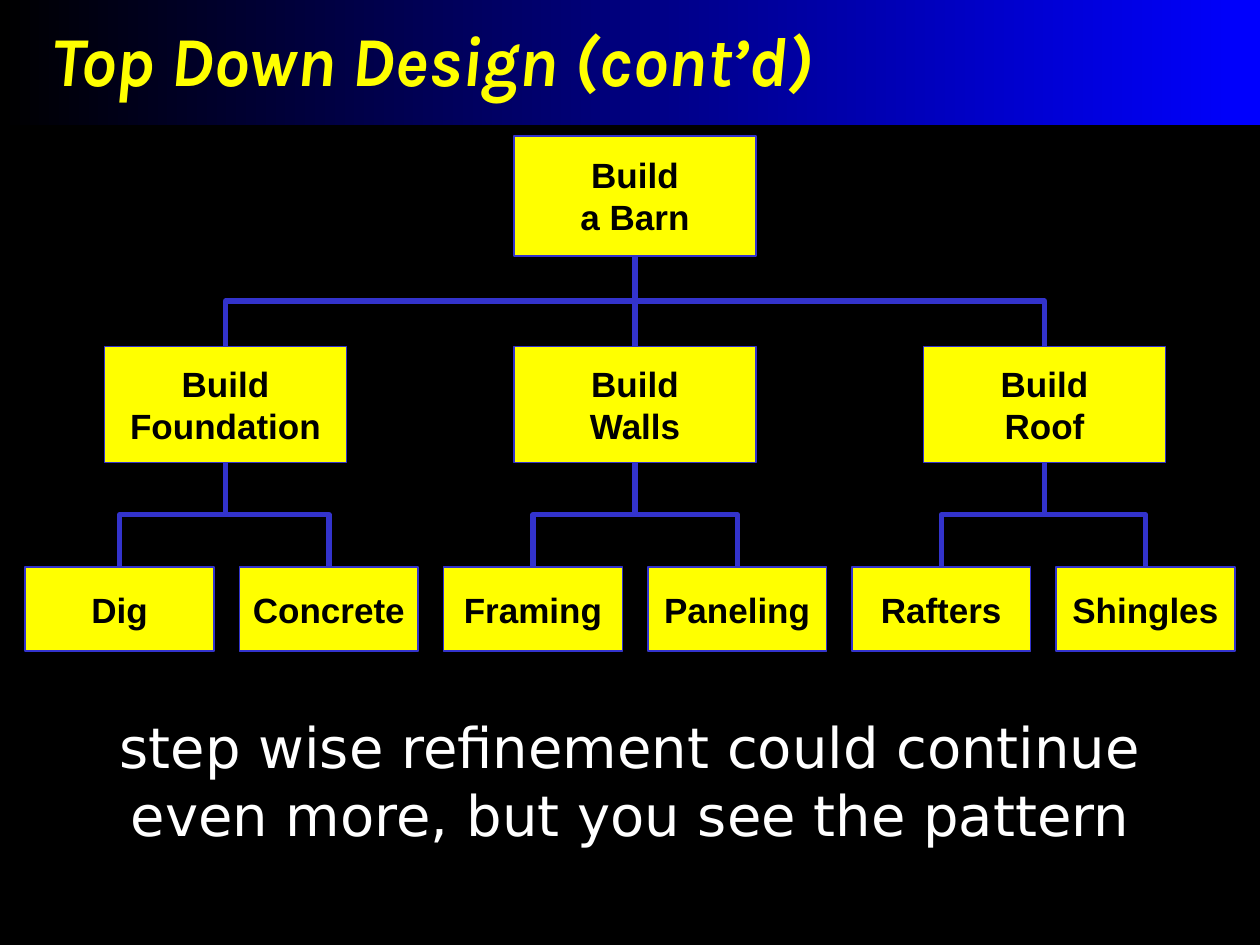
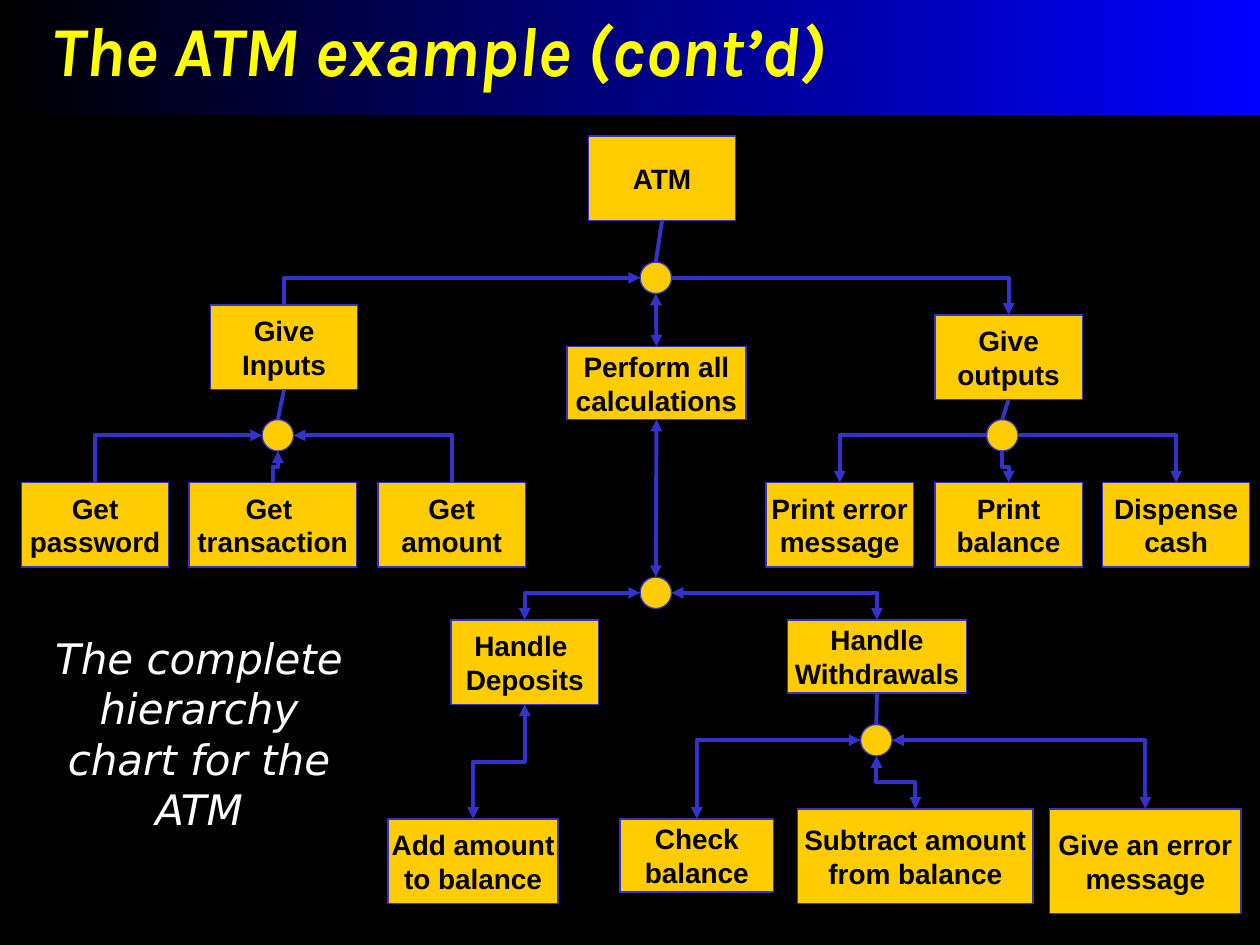
import dataclasses

import lxml.etree
import pptx
import pptx.dml.color
import pptx.enum.shapes
import pptx.enum.text
import pptx.oxml.ns
import pptx.util

Inches = pptx.util.Inches
Align = pptx.enum.text.PP_ALIGN
Anchor = pptx.enum.text.MSO_ANCHOR
Preset = pptx.enum.shapes.MSO_SHAPE
qn = pptx.oxml.ns.qn
rgb = pptx.dml.color.RGBColor.from_string


@dataclasses.dataclass(frozen=True)
class Theme:
    background: str = "000000"
    band_end: str = "0000FF"
    title: str = "FFFF00"
    task: str = "FFFF00"
    module: str = "FFCC00"
    line: str = "3333CC"
    label: str = "000000"
    caption: str = "FFFFFF"
    title_font: str = "Karla"
    label_font: str = "Arial"
    caption_font: str = "DejaVu Sans"
    title_size: int = 40
    task_size: int = 20
    module_size: int = 16


theme = Theme()
SIDES = {"top": (0.5, 0), "left": (0, 0.5), "bottom": (0.5, 1), "right": (1, 0.5)}


def write_text(shape, text, *, font, size, color, bold=False, italic=False, align=Align.CENTER,
               anchor=Anchor.TOP, wrap=True, grow=False, insets=(0.1, 0.05, 0.1, 0.05)):
    frame = shape.text_frame
    frame.word_wrap = wrap
    frame.vertical_anchor = anchor
    resize = pptx.enum.text.MSO_AUTO_SIZE
    frame.auto_size = resize.SHAPE_TO_FIT_TEXT if grow else resize.NONE
    frame.margin_left, frame.margin_top, frame.margin_right, frame.margin_bottom = map(Inches, insets)
    frame.text = text
    for paragraph in frame.paragraphs:
        paragraph.alignment = align
        paragraph.space_before = pptx.util.Pt(0)
        for run in paragraph.runs:
            run.font.name = font
            run.font.size = pptx.util.Pt(size)
            run.font.bold = bold
            run.font.italic = italic
            run.font.color.rgb = rgb(color)


def link(slide, start, start_side, end, end_side, *, width, straight=False, arrows=""):
    """Join two shapes; arrows may hold '<' (at start) and '>' (at end)."""
    points, sites = [], []
    for shape, side in ((start, start_side), (end, end_side)):
        across, down = SIDES[side]
        points += [int(shape.left + shape.width * across), int(shape.top + shape.height * down)]
        round_hub = shape.auto_shape_type == Preset.FLOWCHART_CONNECTOR
        sites.append(list(SIDES).index(side) * (2 if round_hub else 1))
    x1, y1, x2, y2 = points
    kinds = pptx.enum.shapes.MSO_CONNECTOR
    connector = slide.shapes.add_connector(kinds.STRAIGHT if straight else kinds.ELBOW, *points)
    properties = connector._element.spPr

    if not straight and start_side in ("left", "right"):
        # One corner: sideways, then down
        properties.find(qn("a:prstGeom")).set("prst", "bentConnector2")
        if x2 < x1:
            properties.xfrm.flipH, properties.xfrm.flipV = False, True
            properties.xfrm.rot = 180
    elif not straight:
        # Two corners: down, across, down
        drop, shift = y2 - y1, abs(x2 - x1)
        connector.left, connector.top = (x1 + x2 - drop) // 2, (y1 + y2 - shift) // 2
        connector.width, connector.height = drop, shift
        properties.xfrm.flipH = x2 > x1
        properties.xfrm.rot = 270 if x2 > x1 else 90

    glue = connector._element.find(".//" + qn("p:cNvCxnSpPr"))
    for tag, shape, site in zip(("a:stCxn", "a:endCxn"), (start, end), sites):
        lxml.etree.SubElement(glue, qn(tag), id=str(shape.shape_id), idx=str(site))
    connector.line.color.rgb = rgb(theme.line)
    connector.line.width = pptx.util.Pt(width)
    for mark, tag in (("<", "a:headEnd"), (">", "a:tailEnd")):
        if mark in arrows:
            lxml.etree.SubElement(properties.find(qn("a:ln")), qn(tag), type="triangle")
    lxml.etree.SubElement(properties, qn("a:effectLst"))


deck = pptx.Presentation()
deck.slide_width, deck.slide_height = Inches(10), Inches(7.5)
deck.slide_master.background.fill.solid()
deck.slide_master.background.fill.fore_color.rgb = rgb(theme.background)

# Wording and places of each slide's title and caption
pages = [
    ("Top Down Design (cont’d)", 0,
     "step wise refinement could continue even more, but you see the pattern",
     (0.65, 5.61, 8.71, 1.17), 32, False),
    ("The ATM example (cont’d)", -0.08,
     "The complete hierarchy chart for the ATM",
     (0.33, 4.97, 2.5, 1.7), 24, True),
]

# Barn tasks: text, left, top, width, height
barn_boxes = {"barn": ("Build\na Barn", 4.08, 1.08, 1.92, 0.95)}
stages = {"Foundation": ("Dig", "Concrete"), "Walls": ("Framing", "Paneling"),
          "Roof": ("Rafters", "Shingles")}
barn_links = []
for column, (stage, steps) in enumerate(stages.items()):
    barn_boxes[stage] = (f"Build\n{stage}", 0.83 + 3.25 * column, 2.75, 1.92, 0.92)
    barn_links.append(("barn", "bottom", stage, "top", "", stage == "Walls"))
    for half, step in enumerate(steps):
        place = 2 * column + half
        left, width = (0.2, 1.5) if place == 0 else (0.28 + 1.62 * place, 1.42)
        barn_boxes[step] = (step, left, 4.5, width, 0.67)
        barn_links.append((stage, "bottom", step, "top", "", False))

# Cash machine modules
atm_boxes = {
    "atm": ("ATM", 4.67, 1.08, 1.17, 0.67),
    "inputs": ("Give\nInputs", 1.67, 2.42, 1.17, 0.67),
    "calculations": ("Perform all\ncalculations", 4.5, 2.75, 1.42, 0.58),
    "outputs": ("Give\noutputs", 7.42, 2.5, 1.17, 0.67),
    "password": ("Get\npassword", 0.17, 3.83, 1.17, 0.67),
    "transaction": ("Get \ntransaction", 1.5, 3.83, 1.33, 0.67),
    "amount": ("Get\namount", 3, 3.83, 1.17, 0.67),
    "print error": ("Print error\nmessage", 6.08, 3.83, 1.17, 0.67),
    "print balance": ("Print\nbalance", 7.42, 3.83, 1.17, 0.67),
    "cash": ("Dispense\ncash", 8.75, 3.83, 1.17, 0.67),
    "deposits": ("Handle \nDeposits", 3.58, 4.92, 1.17, 0.67),
    "withdrawals": ("Handle\nWithdrawals", 6.25, 4.92, 1.42, 0.58),
    "add": ("Add amount\nto balance", 3.08, 6.5, 1.35, 0.67),
    "check": ("Check\nbalance", 4.92, 6.5, 1.22, 0.58),
    "subtract": ("Subtract amount\nfrom balance", 6.33, 6.42, 1.87, 0.75),
    "give error": ("Give an error\nmessage", 8.33, 6.42, 1.52, 0.83),
}
atm_hubs = {"main hub": (5.08, 2.08), "input hub": (2.08, 3.33), "output hub": (7.83, 3.33),
            "calculation hub": (5.08, 4.58), "withdrawal hub": (6.83, 5.75)}

# Cash machine links: from, side, to, side, arrows, straight
atm_links = [
    ("atm", "bottom", "main hub", "top", "", True),
    ("main hub", "left", "inputs", "top", "<", False),
    ("main hub", "bottom", "calculations", "top", "<>", True),
    ("main hub", "right", "outputs", "top", ">", False),
    ("calculations", "bottom", "calculation hub", "top", "<>", True),
    ("calculation hub", "left", "deposits", "top", "<>", False),
    ("calculation hub", "right", "withdrawals", "top", "<>", False),
    ("deposits", "bottom", "add", "top", "<>", False),
]
branches = [
    ("inputs", "input hub", ("password", "transaction", "amount"), "<"),
    ("outputs", "output hub", ("print error", "print balance", "cash"), ">"),
    ("withdrawals", "withdrawal hub", ("check", "subtract", "give error"), "<>"),
]
for parent, hub, children, arrows in branches:
    atm_links.append((parent, "bottom", hub, "top", "", True))
    for side, child in zip(("left", "bottom", "right"), children):
        atm_links.append((hub, side, child, "top", arrows, False))

charts = [
    (barn_boxes, {}, barn_links, theme.task, theme.task_size, 1, 3),
    (atm_boxes, atm_hubs, atm_links, theme.module, theme.module_size, 0.75, 2.25),
]

for page, chart in zip(pages, charts):
    heading, band_top, remark, remark_place, remark_size, remark_italic = page
    boxes, hubs, links, fill, label_size, outline, link_width = chart
    slide = deck.slides.add_slide(deck.slide_layouts[5])

    # Title band
    title = slide.shapes.title
    title.left, title.top, title.width, title.height = map(Inches, (0, band_top, 10, 0.93))
    title.fill.gradient()
    title.fill.gradient_angle = 0
    for stop, color, position in zip(title.fill.gradient_stops,
                                     (theme.background, theme.band_end), (0, 1)):
        stop.color.rgb = rgb(color)
        stop.position = position
    write_text(title, heading, font=theme.title_font, size=theme.title_size, color=theme.title,
               bold=True, italic=True, align=Align.LEFT, grow=True,
               insets=(0.41, 0.13, 0.14, 0.13))

    # Caption
    caption = slide.shapes.add_textbox(*map(Inches, remark_place))
    write_text(caption, remark, font=theme.caption_font, size=remark_size,
               color=theme.caption, italic=remark_italic, grow=True)

    # Boxes and hubs
    nodes = {}
    outlines = [(name, Preset.RECTANGLE, *box) for name, box in boxes.items()]
    outlines += [(name, Preset.FLOWCHART_CONNECTOR, "", *corner, 0.25, 0.25)
                 for name, corner in hubs.items()]
    for name, preset, label, *place in outlines:
        node = nodes[name] = slide.shapes.add_shape(preset, *map(Inches, place))
        node.shadow.inherit = False
        node.fill.solid()
        node.fill.fore_color.rgb = rgb(fill)
        node.line.color.rgb = rgb(theme.line)
        node.line.width = pptx.util.Pt(outline)
        if label:
            write_text(node, label, font=theme.label_font, size=label_size, color=theme.label,
                       bold=True, anchor=Anchor.MIDDLE, wrap=False)

    # Links
    for start, start_side, end, end_side, arrows, straight in links:
        link(slide, nodes[start], start_side, nodes[end], end_side,
             width=link_width, straight=straight, arrows=arrows)

deck.save("out.pptx")
